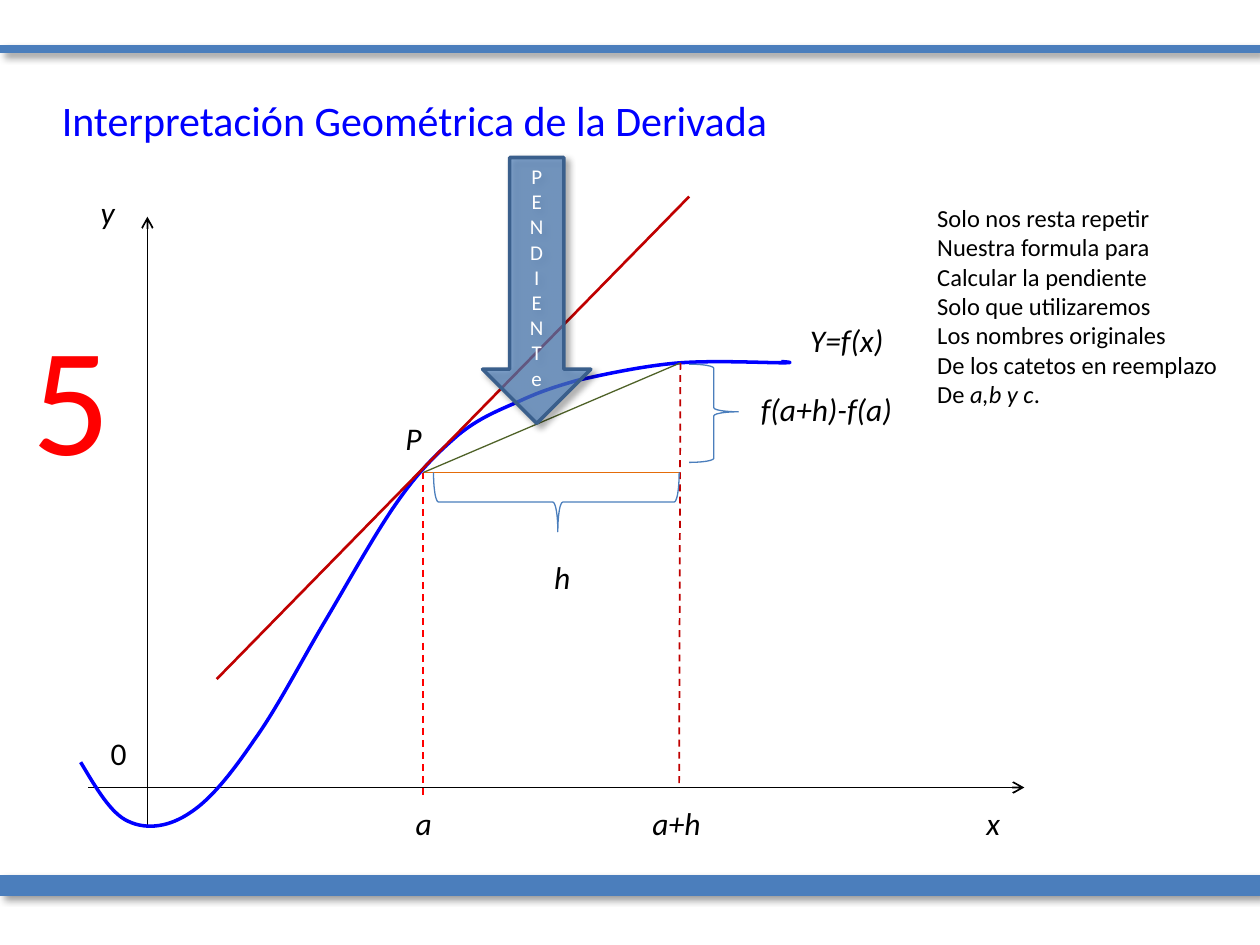
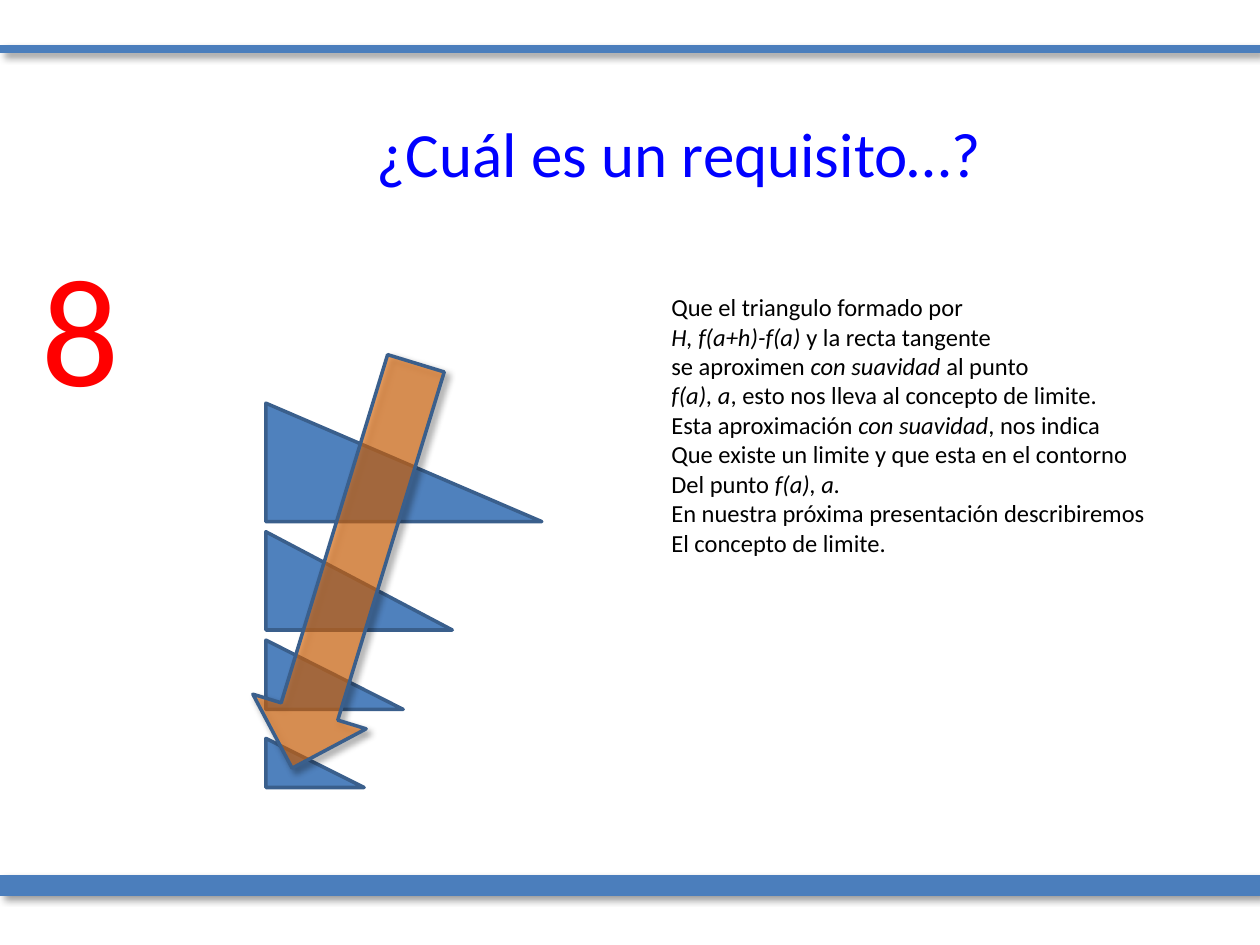
import dataclasses
import typing

import lxml.etree
import pptx
import pptx.dml.color
import pptx.enum.dml
import pptx.enum.shapes
import pptx.enum.text
import pptx.oxml.ns
import pptx.util

RGB = pptx.dml.color.RGBColor
Pt = pptx.util.Pt
Kind = pptx.enum.shapes.MSO_SHAPE
Align = pptx.enum.text.PP_ALIGN
Anchor = pptx.enum.text.MSO_ANCHOR
qn = pptx.oxml.ns.qn

FONT = "Calibri"
BLACK = RGB(0x00, 0x00, 0x00)
WHITE = RGB(0xFF, 0xFF, 0xFF)
BLUE = RGB(0x00, 0x00, 0xFF)
RED = RGB(0xFF, 0x00, 0x00)
BRICK = RGB(0xC0, 0x00, 0x00)
ORANGE = RGB(0xE4, 0x6C, 0x0A)
OLIVE = RGB(0x4F, 0x62, 0x28)
STEEL = RGB(0x4F, 0x81, 0xBD)
BAND = RGB(0x4B, 0x7E, 0xBC)
EDGE = RGB(0x3A, 0x5F, 0x8C)

PX = 9144  # 100 px to the inch
WIDTH, HEIGHT = 1000, 750


class Box(typing.NamedTuple):
    x: int
    y: int
    w: int
    h: int

    def emu(self) -> list[int]:
        return [side * PX for side in self]


@dataclasses.dataclass(frozen=True)
class Seg:
    start: tuple[int, int]
    end: tuple[int, int]
    color: RGB = BLACK
    width: float = 1
    dashed: bool = False
    arrow: bool = False
    shadow: bool = False


@dataclasses.dataclass(frozen=True)
class Label:
    text: str
    box: Box
    italic: bool = True


@dataclasses.dataclass(frozen=True)
class Figure:
    kind: Kind
    box: Box
    fill: RGB | None = None
    alpha: int = 100
    line: RGB = EDGE
    width: float = 2
    turn: int = 0
    adjust: tuple[float, ...] = ()
    shadow: bool = False


BANDS = [
    Seg((0, 39), (WIDTH, 39), BAND, 5, shadow=True),
    Seg((0, 703), (WIDTH, 703), BAND, 12, shadow=True),
]

# Graph: point P on the curve, and the second point where x = a+h
P, Q = (336, 375), (540, 288)
AXES = [
    Seg((117, 656), (117, 172), arrow=True),
    Seg((70, 625), (813, 625), arrow=True),
]
LINES = [
    Seg(P, (336, 633), RED, dashed=True),
    Seg(Q, (539, 625), BRICK, dashed=True),
    Seg(P, (539, 375), ORANGE, 0.75),
    Seg(P, Q, OLIVE, 0.75),
    Seg((172, 539), (547, 156), BRICK, 1.5),
]
# Start point, then two handles and an end point for each curved piece
CURVE = [
    (64, 605), (76, 625), (88, 646), (102, 652),
    (117, 659), (135, 656), (151, 645), (168, 634), (185, 612), (202, 587),
    (220, 562), (239, 525), (258, 493), (277, 461), (299, 421), (317, 396),
    (334, 372), (349, 358), (364, 345), (380, 332), (395, 326), (411, 319),
    (426, 312), (437, 308), (458, 302), (480, 297), (513, 290), (540, 288),
    (568, 286), (608, 288), (621, 288), (635, 288), (620, 287), (620, 287),
]
BRACES = [
    Figure(Kind.RIGHT_BRACE, Box(547, 289, 39, 78), line=BAND, width=0.75,
           adjust=(0.083, 0.485)),
    Figure(Kind.RIGHT_BRACE, Box(418, 301, 47, 195), line=BAND, width=0.75,
           turn=90, adjust=(0.083, 0.494)),
]
LABELS = [
    Label("x", Box(773, 633, 31, 40)),
    Label("y", Box(70, 148, 32, 40)),
    Label("Y=f(x)", Box(633, 250, 79, 40)),
    Label("f(a+h)-f(a)", Box(594, 305, 126, 40)),
    Label("h", Box(430, 438, 33, 40)),
    Label("a", Box(320, 633, 33, 40)),
    Label("a+h", Box(508, 633, 59, 40)),
    Label("0", Box(78, 578, 33, 40), italic=False),
    Label("P", Box(312, 328, 33, 40)),
]
SLOPE = Figure(Kind.DOWN_ARROW, Box(383, 125, 86, 211), STEEL, 68, shadow=True)
SLOPE_NOTE = """Solo nos resta repetir
Nuestra formula para
Calcular la pendiente
Solo que utilizaremos
Los nombres originales
De los catetos en reemplazo
De *a,b y c*."""

TRIS = [
    Figure(Kind.RIGHT_TRIANGLE, Box(211, y, w, h), STEEL)
    for y, w, h in [(320, 219, 94), (422, 148, 78), (508, 109, 55), (586, 78, 39)]
]
TREND = Figure(Kind.DOWN_ARROW, Box(234, 281, 94, 336), ORANGE, 61, turn=17,
               shadow=True)
LIMIT_NOTE = """Que el triangulo formado por
*H, f(a+h)-f(a)* y la recta tangente
se aproximen *con suavidad *al punto
*f(a), a*, esto nos lleva al concepto de limite.
Esta aproximación *con suavidad*, nos indica
Que existe un limite y que esta en el contorno
Del punto *f(a), a.*
En nuestra próxima presentación describiremos
El concepto de limite."""


def node(parent: typing.Any, tag: str, **attrs: object) -> typing.Any:
    return lxml.etree.SubElement(
        parent, qn(tag), {key: str(value) for key, value in attrs.items()})


def cast(effects: typing.Any) -> None:
    """Put the shared soft shadow in an effect list."""
    outer = node(effects, "a:outerShdw", blurRad=Pt(4), dist=Pt(3),
                 dir=45 * 60000, algn="tl", rotWithShape=0)
    node(node(outer, "a:srgbClr", val=BLACK), "a:alpha", val=40000)


def write(frame: typing.Any, text: str, *, size: int, color: RGB = BLACK,
          italic: bool = False, align: Align = Align.LEFT) -> None:
    """Fill a frame, one paragraph a line; asterisks enclose italic words."""
    for row, line in enumerate(text.split("\n")):
        para = frame.paragraphs[0] if row == 0 else frame.add_paragraph()
        para.alignment = align
        for part, words in enumerate(line.split("*")):
            if not words:
                continue
            run = para.add_run()
            run.text = words
            run.font.name = FONT
            run.font.size = Pt(size)
            run.font.color.rgb = color
            run.font.bold = False
            run.font.italic = italic or part % 2 == 1


def fit(frame: typing.Any) -> None:
    frame.word_wrap = False
    frame.auto_size = pptx.enum.text.MSO_AUTO_SIZE.SHAPE_TO_FIT_TEXT
    frame.vertical_anchor = Anchor.TOP


def note(slide: typing.Any, text: str, box: Box, **style: typing.Any) -> None:
    frame = slide.shapes.add_textbox(*box.emu()).text_frame
    fit(frame)
    write(frame, text, **style)


def link(slide: typing.Any, seg: Seg) -> None:
    ends = [side * PX for side in seg.start + seg.end]
    line = slide.shapes.add_connector(
        pptx.enum.shapes.MSO_CONNECTOR.STRAIGHT, *ends)
    line.line.color.rgb = seg.color
    line.line.width = Pt(seg.width)
    if seg.dashed:
        line.line.dash_style = pptx.enum.dml.MSO_LINE.DASH
    props = line.element.find(qn("p:spPr"))
    if seg.arrow:
        node(props.find(qn("a:ln")), "a:tailEnd", type="arrow")
    effects = node(props, "a:effectLst")
    if seg.shadow:
        cast(effects)


def draw(slide: typing.Any, fig: Figure) -> typing.Any:
    shape = slide.shapes.add_shape(fig.kind, *fig.box.emu())
    shape.rotation = fig.turn
    for place, value in enumerate(fig.adjust):
        shape.adjustments[place] = value
    if fig.fill is None:
        shape.fill.background()
    else:
        shape.fill.solid()
        shape.fill.fore_color.rgb = fig.fill
    props = shape.element.find(qn("p:spPr"))
    if fig.alpha < 100:
        tint = props.find(qn("a:solidFill")).find(qn("a:srgbClr"))
        node(tint, "a:alpha", val=fig.alpha * 1000)
    shape.line.color.rgb = fig.line
    shape.line.width = Pt(fig.width)
    shape.shadow.inherit = False
    if fig.shadow:
        cast(props.find(qn("a:effectLst")))
    return shape


def trace(slide: typing.Any, points: list[tuple[int, int]]) -> None:
    """Draw an open curve, turning each three segments into one Bezier."""
    pen = slide.shapes.build_freeform(*points[0], scale=PX)
    pen.add_line_segments(points[1:], close=False)
    shape = pen.convert_to_shape()
    shape.fill.background()
    shape.line.color.rgb = BLUE
    shape.line.width = Pt(2)
    shape.shadow.inherit = False
    track = next(shape.element.iter(qn("a:path")))
    steps = track.findall(qn("a:lnTo"))
    for first in range(0, len(steps), 3):
        bend = node(track, "a:cubicBezTo")
        for step in steps[first:first + 3]:
            bend.append(step[0])
            track.remove(step)


def start(deck: typing.Any, title: str, box: Box, size: int) -> typing.Any:
    """Add a slide with its bands and title."""
    slide = deck.slides.add_slide(deck.slide_layouts[5])
    for band in BANDS:
        link(slide, band)
    head = slide.shapes.title
    head.left, head.top, head.width, head.height = box.emu()
    fit(head.text_frame)
    write(head.text_frame, title, size=size, color=BLUE)
    return slide


def graph(deck: typing.Any) -> None:
    slide = start(deck, "Interpretación Geométrica de la Derivada",
                  Box(39, 70, 586, 50), 24)
    for axis in AXES:
        link(slide, axis)
    trace(slide, CURVE)
    for line in LINES:
        link(slide, line)
    for brace in BRACES:
        draw(slide, brace)
    for label in LABELS:
        note(slide, label.text, label.box, size=18, italic=label.italic)
    frame = draw(slide, SLOPE).text_frame
    frame.vertical_anchor = Anchor.MIDDLE
    write(frame, "\n".join("PENDIENTe"), size=12, color=WHITE,
          align=Align.CENTER)
    note(slide, SLOPE_NOTE, Box(734, 156, 244, 175), size=14)
    note(slide, "5", Box(16, 234, 83, 158), size=88, color=RED)


def limit(deck: typing.Any) -> None:
    slide = start(deck, "¿Cuál es un requisito…?", Box(289, 86, 504, 71), 36)
    for fig in TRIS + [TREND]:
        draw(slide, fig)
    note(slide, LIMIT_NOTE, Box(523, 227, 397, 222), size=14)
    note(slide, "8", Box(23, 180, 83, 158), size=88, color=RED)


def main() -> None:
    deck = pptx.Presentation()
    deck.slide_width, deck.slide_height = WIDTH * PX, HEIGHT * PX
    graph(deck)
    limit(deck)
    deck.save("out.pptx")


if __name__ == "__main__":
    main()
